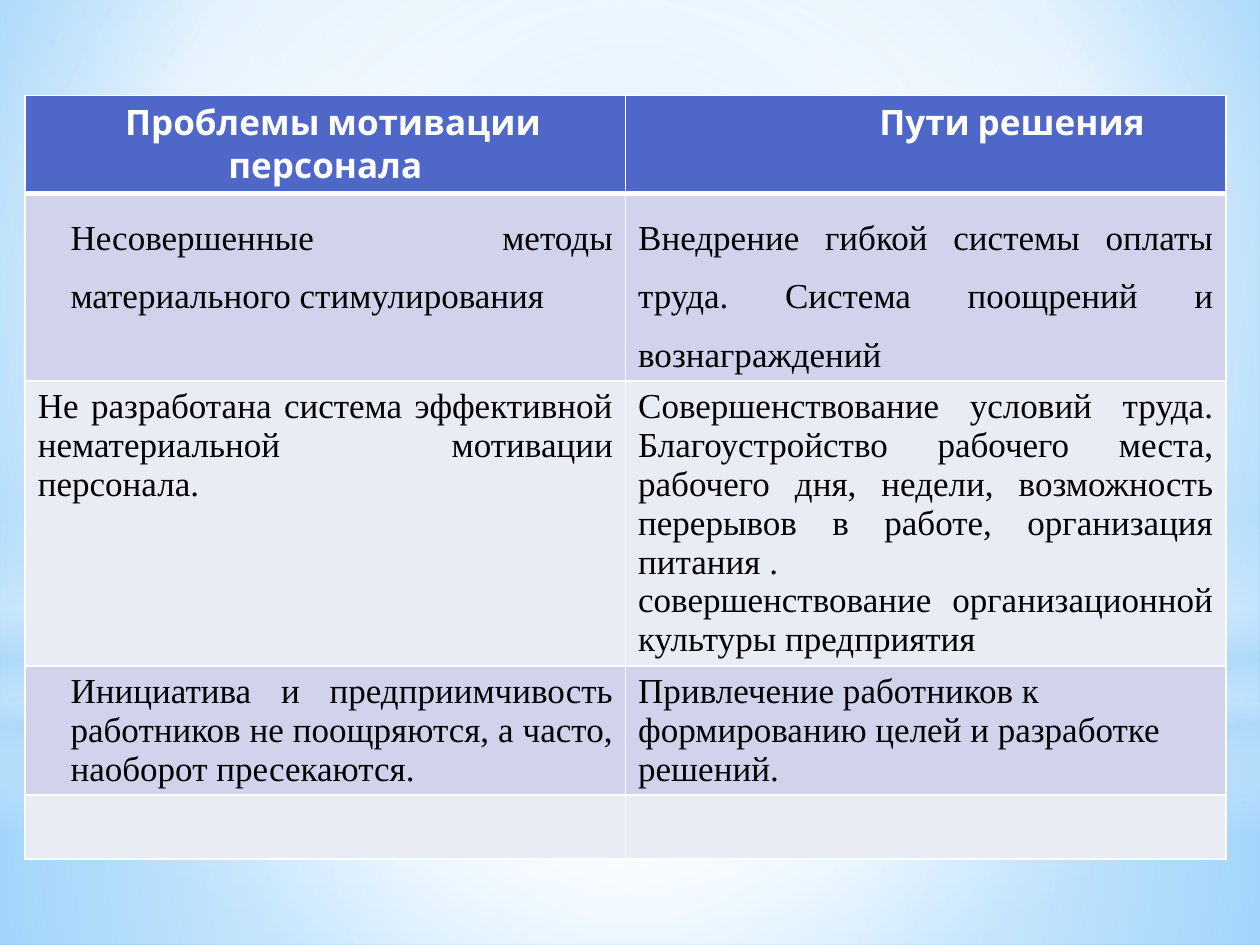
from pptx import Presentation
from pptx.dml.color import RGBColor
from pptx.enum import shapes, text
from pptx.oxml import parse_xml
from pptx.oxml.ns import nsdecls, qn
from pptx.util import Inches, Pt

NS = nsdecls("a")
WHITE, BLACK = "FFFFFF", "000000"
HEAD, DARK, PALE = "4E67C8", "D0D3EB", "E9EBF5"
MID, LEFT, JUST = (text.PP_ALIGN.CENTER, text.PP_ALIGN.LEFT,
                   text.PP_ALIGN.JUSTIFY)
RECT, OVAL = shapes.MSO_SHAPE.RECTANGLE, shapes.MSO_SHAPE.OVAL

# Gradient stops: position %, colour, opacity %
BACK = [(0, "9ED5FF", 100), (60, WHITE, 100), (100, "5BB9FF", 100)]
CORE = (50, 50, 50, 50)
GLOWS = [
    (RECT, (0, 5.58, 10, 1.92), CORE,
     [(0, WHITE, 91), (37, WHITE, 76), (100, "B4DCFA", 79)]),
    (RECT, (0, 0, 10, 5.58), CORE,
     [(0, WHITE, 89), (48, WHITE, 62), (100, "B4DCFA", 79)]),
    (RECT, (0, 4.12, 10, 2.5), None,
     [(0, WHITE, 0), (29, WHITE, 30), (45, "B4DCFA", 40),
      (55, WHITE, 26), (65, "B4DCFA", 60), (100, WHITE, 0)]),
    (OVAL, (0, 1.75, 10, 5.58), CORE, [(0, WHITE, 100), (56, WHITE, 0)]),
]

# Row: height, fill, cells; cell: paragraphs, format
ROWS = [
    (0.77, HEAD, [
        (["Проблемы мотивации персонала"], {"align": MID, "first": 0.12}),
        (["Пути решения"], {"align": MID, "left": 1.37})]),
    (1.48, DARK, [
        (["Несовершенные методы материального стимулирования"],
         {"left": 0.26, "line": 1.5, "after": 10}),
        (["Внедрение гибкой системы оплаты труда. Система поощрений "
          "и вознаграждений"], {"line": 1.5})]),
    (2.26, PALE, [
        (["Не разработана система эффективной нематериальной мотивации "
          "персонала."], {}),
        (["Совершенствование условий труда. Благоустройство рабочего места, "
          "рабочего дня, недели, возможность перерывов в работе, "
          "организация питания .",
          "совершенствование организационной культуры предприятия"], {})]),
    (1.02, DARK, [
        (["Инициатива и предприимчивость работников не поощряются, а часто, "
          "наоборот пресекаются."], {"left": 0.26, "after": 10}),
        (["Привлечение работников к формированию целей и разработке "
          "решений."], {"align": LEFT})]),
    (0.51, PALE, [([], {}), ([], {})]),
]
BODY = {"name": "Times New Roman", "size": Pt(20), "bold": False}
TITLE = {"name": "Cabin", "size": Pt(20), "bold": True}


def color(code):
    return RGBColor.from_string(code)


def shade(props, stops, focus):
    """Swap the solid fill in props for a radial or vertical gradient."""
    marks = "".join(
        f'<a:gs pos="{pos * 1000}"><a:srgbClr val="{code}">'
        f'<a:alpha val="{seen * 1000}"/></a:srgbClr></a:gs>'
        for pos, code, seen in stops)
    if focus:
        sides = " ".join(f'{side}="{part * 1000}"'
                         for side, part in zip("ltrb", focus))
        way = f'<a:path path="circle"><a:fillToRect {sides}/></a:path>'
    else:
        way = '<a:lin ang="5400000" scaled="0"/>'
    solid = props.find(qn("a:solidFill"))
    props.replace(solid, parse_xml(
        f'<a:gradFill {NS} rotWithShape="1"><a:gsLst>{marks}</a:gsLst>'
        f'{way}</a:gradFill>'))


def edge(cell, base):
    """Draw white cell borders, with the given bottom width."""
    props = cell._tc.get_or_add_tcPr()
    for spot, side in enumerate("LRTB"):
        width = Pt(base if side == "B" else 1)
        props.insert(spot, parse_xml(
            f'<a:ln{side} {NS} w="{width}"><a:solidFill>'
            f'<a:srgbClr val="{WHITE}"/></a:solidFill></a:ln{side}>'))


def write(cell, lines, form, font, ink):
    frame = cell.text_frame
    for num, line in enumerate(lines):
        para = frame.add_paragraph() if num else frame.paragraphs[0]
        para.alignment = form.get("align", JUST)
        para.line_spacing = form.get("line", 1.0)
        para.space_after = Pt(form.get("after", 0))
        props = para._p.get_or_add_pPr()
        props.set("marL", str(Inches(form.get("left", 0))))
        props.set("indent", str(Inches(form.get("first", 0))))
        run = para.add_run()
        run.text = line
        for key, val in font.items():
            setattr(run.font, key, val)
        run.font.color.rgb = color(ink)


def main():
    deck = Presentation()
    deck.slide_width, deck.slide_height = Inches(10), Inches(7.5)
    slide = deck.slides.add_slide(deck.slide_layouts[6])

    slide.background.fill.solid()
    slide.background.fill.fore_color.rgb = color(WHITE)
    shade(slide.element.find(".//" + qn("p:bgPr")), BACK, (20, 10, 20, 60))
    for kind, box, focus, stops in GLOWS:
        glow = slide.shapes.add_shape(kind, *map(Inches, box))
        glow.shadow.inherit = False
        glow.line.fill.background()
        glow.fill.solid()
        glow.fill.fore_color.rgb = color(WHITE)
        shade(glow.element.spPr, stops, focus)

    tall = sum(row[0] for row in ROWS)
    table = slide.shapes.add_table(
        len(ROWS), 2, *map(Inches, (0.2, 0.76, 9.53, tall))).table
    for num, (high, fill, cells) in enumerate(ROWS):
        table.rows[num].height = Inches(high)
        top = num == 0
        for col, (lines, form) in enumerate(cells):
            cell = table.cell(num, col)
            cell.fill.solid()
            cell.fill.fore_color.rgb = color(fill)
            edge(cell, 3 if top else 1)
            write(cell, lines, form, TITLE if top else BODY,
                  WHITE if top else BLACK)
    deck.save("out.pptx")


if __name__ == "__main__":
    main()
